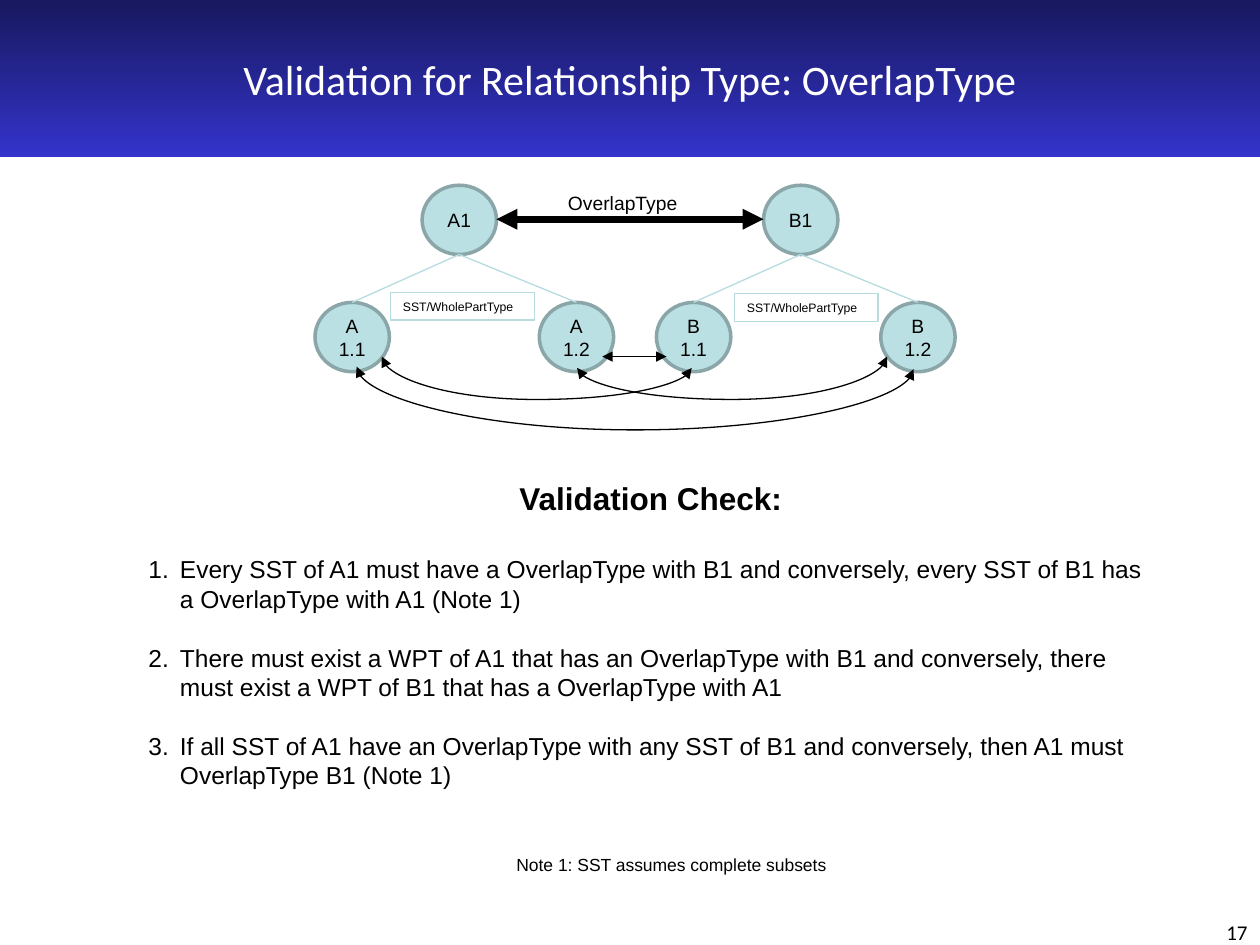
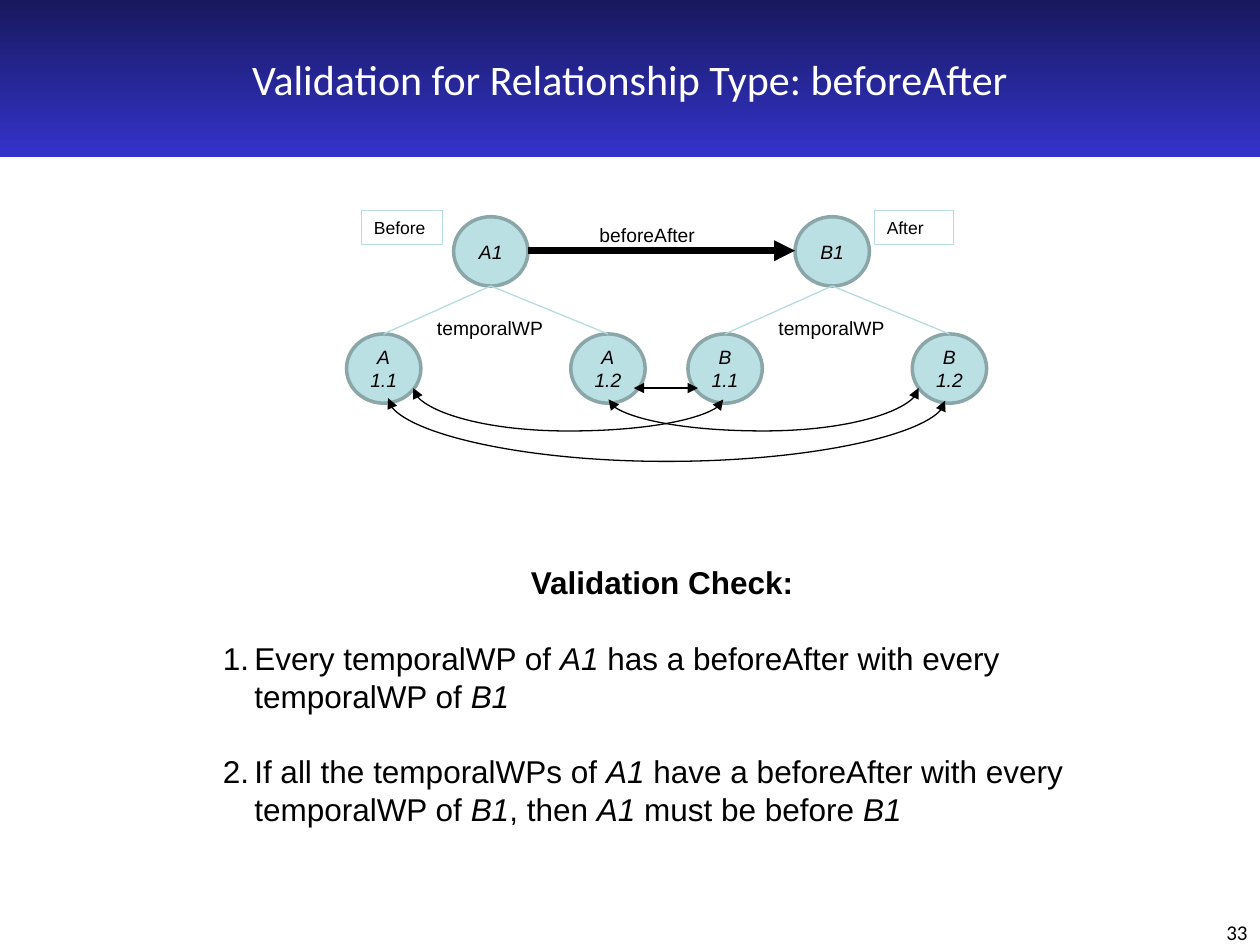
from lxml import etree
from pptx import Presentation
from pptx import util as u
from pptx.dml.color import RGBColor
from pptx.enum import shapes, text
from pptx.oxml.ns import qn

# Grid: 100 columns by 75 rows of a tenth of an inch
COLS, ROWS = 100, 75
NAVY, BLUE, WHITE, BLACK = "18185E", "3333CC", "FFFFFF", "000000"
NODE_FILL, NODE_LINE, TREE_LINE = "BBE0E3", "8AA6A8", "B6DCDF"
NODE_W, NODE_H = 5.9, 5.5
CHILD_STEP, CHILD_DROP, ROOT_SHIFT, TREE_STEP = 17.8, 9.3, 8.5, 27.1
LABEL_W, LABEL_H = 12, 2.9
LINE_SPACING = 1.2
CENTER = text.PP_ALIGN.CENTER


def g(n):
    return u.Inches(n / 10)


def rgb(hex_color):
    return RGBColor.from_string(hex_color)


def add_run(p, words, size, color=BLACK, font="Arial", bold=False, italic=False):
    r = p.add_run()
    r.text = words
    r.font.size, r.font.name = u.Pt(size), font
    r.font.bold, r.font.italic = bold, italic
    r.font.color.rgb = rgb(color)


def add_text(s, x, y, w, h, words, size, font="Arial", align=None, bold=False):
    tf = s.shapes.add_textbox(g(x), g(y), g(w), g(h)).text_frame
    tf.word_wrap = True
    tf.paragraphs[0].alignment = align
    add_run(tf.paragraphs[0], words, size, font=font, bold=bold)
    return tf


def add_box(s, kind, x, y, w, h, line=None, width=0.75):
    sp = s.shapes.add_shape(kind, g(x), g(y), g(w), g(h))
    sp.shadow.inherit = False
    sp.fill.background()
    if line:
        sp.line.color.rgb = rgb(line)
        sp.line.width = u.Pt(width)
    else:
        sp.line.fill.background()
    return sp


def add_line(s, x1, y1, x2, y2, color=BLACK, width=0.75, ends=(),
             kind=shapes.MSO_CONNECTOR.STRAIGHT):
    c = s.shapes.add_connector(kind, g(x1), g(y1), g(x2), g(y2))
    c.line.color.rgb = rgb(color)
    c.line.width = u.Pt(width)
    ln = c.line._get_or_add_ln()
    for end in ends:
        etree.SubElement(ln, qn(f"a:{end}"), type="triangle")
    etree.SubElement(c.element.spPr, qn("a:effectLst"))
    return c


def add_curve(s, x1, y1, x2, y2, floor):
    """Double-headed curve that hangs down to the floor row."""
    c = add_line(s, x1, y1, x2, y2, ends=("headEnd", "tailEnd"),
                 kind=shapes.MSO_CONNECTOR.CURVE)
    span, rise = x2 - x1, abs(y2 - y1)
    falling = y2 > y1
    # A quarter turn swaps width and height around the same centre
    c.left, c.top = g((x1 + x2 - rise) / 2), g((y1 + y2 - span) / 2)
    c.width, c.height = g(rise), g(span)
    xfrm = c.element.spPr.find(qn("a:xfrm"))
    xfrm.set("rot", str((270 if falling else 90) * 60000))
    xfrm.set("flipH", "1")
    xfrm.set("flipV", "0" if falling else "1")
    sag = (floor - y1) / rise * (1 if falling else -1)
    guides = c.element.spPr.find(qn("a:prstGeom")).find(qn("a:avLst"))
    etree.SubElement(guides, qn("a:gd"), name="adj1", fmla=f"val {round(sag * 100000)}")


def add_frame(s, title, number):
    # Title band
    band = add_box(s, shapes.MSO_SHAPE.RECTANGLE, 0, 0, COLS, ROWS / 6)
    band.fill.gradient()
    band.fill.gradient_angle = 270
    for stop, color, place in zip(band.fill.gradient_stops, (NAVY, BLUE), (0, 1)):
        stop.color.rgb = rgb(color)
        stop.position = place
    tf = band.text_frame
    tf.vertical_anchor = text.MSO_ANCHOR.MIDDLE
    tf.paragraphs[0].alignment = CENTER
    add_run(tf.paragraphs[0], title, 24, WHITE, "Calibri")
    # Slide number
    add_text(s, COLS - 23.3, ROWS - 2.5, 23.3, 2.5, number, 12, "Calibri",
             text.PP_ALIGN.RIGHT)


def add_node(s, x, y, lines, italic):
    sp = add_box(s, shapes.MSO_SHAPE.OVAL, x, y, NODE_W, NODE_H, NODE_LINE, 2)
    sp.fill.solid()
    sp.fill.fore_color.rgb = rgb(NODE_FILL)
    tf = sp.text_frame
    tf.margin_left = tf.margin_right = tf.margin_top = tf.margin_bottom = 0
    tf.vertical_anchor = text.MSO_ANCHOR.MIDDLE
    for i, words in enumerate(lines):
        p = tf.add_paragraph() if i else tf.paragraphs[0]
        p.alignment = CENTER
        add_run(p, words, 11, italic=italic)
    return sp


def add_tree(s, x, y, letter, italic):
    root_x = x + ROOT_SHIFT
    add_node(s, root_x, y, [letter + "1"], italic)
    for i, part in enumerate(("1.1", "1.2")):
        child_x, child_y = x + i * CHILD_STEP, y + CHILD_DROP
        child = add_node(s, child_x, child_y, [letter, part], italic)
        branch = add_line(s, root_x + NODE_W / 2, y + NODE_H,
                          child_x + NODE_W / 2, child_y, TREE_LINE)
        branch.end_connect(child, 0)


def add_diagram(s, x, y, relation, ends, tags=(), labels=(), tag_size=10, italic=False):
    for i, letter in enumerate("AB"):
        add_tree(s, x + i * TREE_STEP, y, letter, italic)
    # Relation between the two roots
    start = x + ROOT_SHIFT + NODE_W
    add_line(s, start, y + 2.7, start + TREE_STEP - NODE_W, y + 2.7, width=4, ends=ends)
    for dx, dy, words in [(19.1, 0, relation), *labels]:
        add_text(s, x + dx, y + dy, LABEL_W, LABEL_H, words, 11)
    # Framed tags
    for dx, dy, w, h, words in tags:
        tag = add_box(s, shapes.MSO_SHAPE.RECTANGLE, x + dx, y + dy, w, h, TREE_LINE)
        p = tag.text_frame.paragraphs[0]
        p.alignment = text.PP_ALIGN.LEFT
        add_run(p, words, tag_size)
    # Links between the parts
    for x1, y1, x2, y2, floor in [(5.3, 13.6, 29.9, 14.5, 17),
                                  (20.8, 14.5, 45.4, 13.6, 17),
                                  (3.3, 14.4, 47.5, 14.6, 19.4)]:
        add_curve(s, x + x1, y + y1, x + x2, y + y2, y + floor)
    add_line(s, x + 22.8, y + 13.6, x + 27.9, y + 13.6, ends=("headEnd", "tailEnd"))


def add_checks(s, x, y, w, h, size, checks):
    """Heading and numbered checks; every second piece of a check is italic."""
    tf = add_text(s, x, y, w, h, "Validation Check:", 18, align=CENTER, bold=True)
    for i, pieces in enumerate(checks):
        p = tf.add_paragraph()
        pPr = p._p.get_or_add_pPr()
        pPr.set("marL", str(g(2.5)))
        pPr.set("indent", str(-g(2.5)))
        etree.SubElement(pPr, qn("a:buFont"), typeface="+mj-lt")
        etree.SubElement(pPr, qn("a:buAutoNum"), type="arabicPeriod")
        p.space_before = u.Pt((size if i else 18) * LINE_SPACING)
        for j, words in enumerate(pieces):
            add_run(p, words, size, italic=j % 2 == 1)


def overlap_slide(s):
    add_frame(s, "Validation for Relationship Type: OverlapType", "17")
    add_checks(s, 10.8, 37.5, 81.7, 25.9, 14, [
        ["Every SST of A1 must have a OverlapType with B1 and conversely, "
         "every SST of B1 has a OverlapType with A1 (Note 1)"],
        ["There must exist a WPT of A1 that has an OverlapType with B1 and "
         "conversely, there must exist a WPT of B1 that has a OverlapType with A1"],
        ["If all SST of A1 have an OverlapType with any SST of B1 and "
         "conversely, then A1 must OverlapType B1 (Note 1)"]])
    add_diagram(s, 25, 14.7, "OverlapType", ("headEnd", "tailEnd"), tag_size=7,
                tags=[(6, 8.5, 11.4, 2.2, "SST/WholePartType"),
                      (33.3, 8.6, 11.4, 2.2, "SST/WholePartType")])
    add_text(s, 40, 67.3, 54.7, 2.7, "Note 1: SST assumes complete subsets", 10)


def before_after_slide(s):
    add_frame(s, "Validation for Relationship Type: beforeAfter", "33")
    add_checks(s, 16.7, 44.2, 71.7, 22.2, 18, [
        ["Every temporalWP of ", "A1",
         " has a beforeAfter with every temporalWP of ", "B1"],
        ["If all the temporalWPs of ", "A1",
         " have a beforeAfter with every temporalWP of ", "B1",
         ", then ", "A1", " must be before ", "B1"]])
    add_diagram(s, 27.5, 17.2, "beforeAfter", ("tailEnd",), italic=True,
                tags=[(1.2, -0.5, 6.4, 2.7, "Before"), (41.9, -0.5, 6.3, 2.7, "After")],
                labels=[(6.2 + i * TREE_STEP, 7.4, "temporalWP") for i in range(2)])


def main():
    prs = Presentation()
    prs.slide_width, prs.slide_height = g(COLS), g(ROWS)
    for build in (overlap_slide, before_after_slide):
        build(prs.slides.add_slide(prs.slide_layouts[6]))
    prs.save("out.pptx")


if __name__ == "__main__":
    main()
